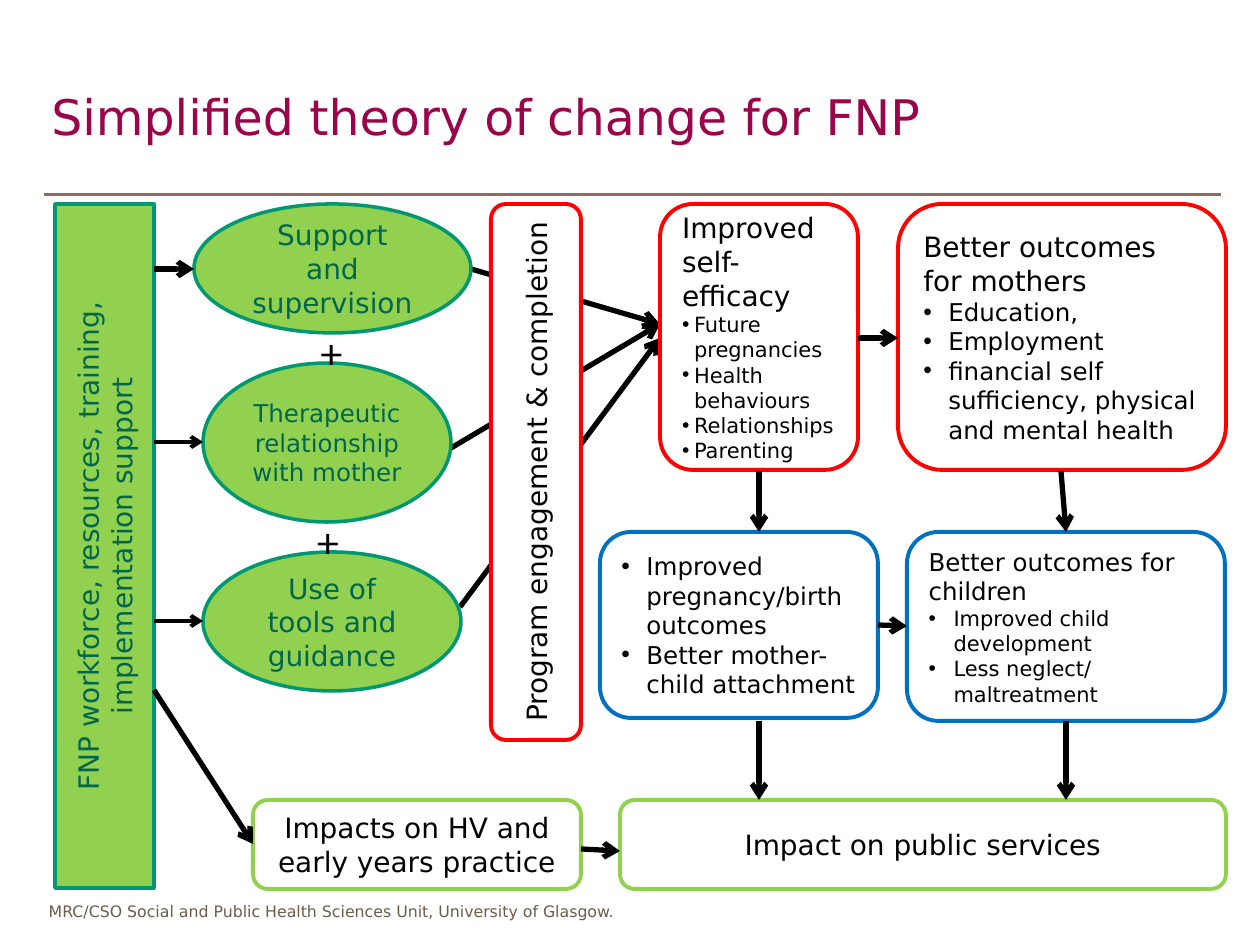
from dataclasses import dataclass

from lxml import etree
from pptx import Presentation
from pptx.dml.color import RGBColor
from pptx.enum.shapes import MSO_CONNECTOR, MSO_SHAPE
from pptx.enum.text import MSO_ANCHOR, PP_ALIGN
from pptx.oxml.ns import qn
from pptx.util import Emu, Pt

RECT, ROUND, OVAL = MSO_SHAPE.RECTANGLE, MSO_SHAPE.ROUNDED_RECTANGLE, MSO_SHAPE.OVAL
STRAIGHT = MSO_CONNECTOR.STRAIGHT
LEFT, CENTER = PP_ALIGN.LEFT, PP_ALIGN.CENTER
TOP, MIDDLE = MSO_ANCHOR.TOP, MSO_ANCHOR.MIDDLE

PX_PER_INCH = 126
PAGE_WIDTH, PAGE_HEIGHT = 1260, 945


@dataclass(frozen=True)
class Theme:
    font: str = "DejaVu Sans"
    plus_font: str = "Cambria"
    title: str = "9A044B"
    rule: str = "91695F"
    footer: str = "6C5C4C"
    ink: str = "000000"
    paper: str = "FFFFFF"
    green: str = "92D050"
    teal: str = "009771"
    dark_teal: str = "00664D"
    red: str = "FF0000"
    blue: str = "0070C0"
    title_size: int = 28
    large: int = 16
    medium: int = 14
    small: int = 12
    footer_size: int = 9
    input_line: float = 2
    box_line: float = 2.25
    arrow_line: float = 3
    thin_arrow: float = 2.25
    rule_line: float = 1.75


THEME = Theme()


def px(length):
    return Emu(round(length * 914400 / PX_PER_INCH))


def rgb(value):
    return RGBColor.from_string(value)


def add_para(frame, text, size, color, align=LEFT, font=THEME.font, indent=0):
    """Fill the first paragraph if it is still empty, otherwise append one."""
    first = frame.paragraphs[0]
    para = frame.add_paragraph() if first.runs else first
    para.alignment = align
    if indent:
        props = para._p.get_or_add_pPr()
        props.set("marL", str(px(indent)))
        props.set("indent", str(-px(indent)))
        etree.SubElement(props, qn("a:buFont")).set("typeface", "Arial")
        etree.SubElement(props, qn("a:buChar")).set("char", "•")
    span = para.add_run()
    span.text = text
    span.font.name = font
    span.font.size = Pt(size)
    span.font.color.rgb = rgb(color)


def add_label(page, bounds, text, size, color, align=CENTER, anchor=TOP,
              font=THEME.font, wrap=True):
    box = page.shapes.add_textbox(*map(px, bounds))
    frame = box.text_frame
    frame.word_wrap = wrap
    frame.vertical_anchor = anchor
    add_para(frame, text, size, color, align, font)


def add_panel(page, kind, bounds, fill, line, width, vertical=False):
    """Add a plain shape and return its text frame."""
    box = page.shapes.add_shape(kind, *map(px, bounds))
    box.shadow.inherit = False
    box.fill.solid()
    box.fill.fore_color.rgb = rgb(fill)
    box.line.color.rgb = rgb(line)
    box.line.width = Pt(width)
    frame = box.text_frame
    frame.word_wrap = True
    frame.vertical_anchor = MIDDLE
    if vertical:
        frame._txBody.bodyPr.set("vert", "vert270")
    return frame


def add_input(page, kind, bounds, text, size=THEME.large, vertical=False):
    frame = add_panel(page, kind, bounds, THEME.green, THEME.teal,
                      THEME.input_line, vertical)
    add_para(frame, text, size, THEME.dark_teal, CENTER)


def add_step(page, bounds, line, text, vertical=False):
    frame = add_panel(page, ROUND, bounds, THEME.paper, line, THEME.box_line, vertical)
    add_para(frame, text, THEME.large, THEME.ink, CENTER)


def add_outcome(page, bounds, line, heading, heading_size, items, item_size, indent):
    frame = add_panel(page, ROUND, bounds, THEME.paper, line, THEME.box_line)
    if heading:
        add_para(frame, heading, heading_size, THEME.ink)
    for item in items:
        add_para(frame, item, item_size, THEME.ink, indent=indent)


def add_line(page, points, color=THEME.ink, width=THEME.arrow_line, arrow=True):
    line = page.shapes.add_connector(STRAIGHT, *map(px, points))
    line.line.color.rgb = rgb(color)
    line.line.width = Pt(width)
    if arrow:
        etree.SubElement(line.line._get_or_add_ln(), qn("a:tailEnd")).set("type", "arrow")
    etree.SubElement(line._element.spPr, qn("a:effectLst"))


def add_frame(page):
    add_label(page, (32, 896, 598, 32),
              "MRC/CSO Social and Public Health Sciences Unit, University of Glasgow.",
              THEME.footer_size, THEME.footer, wrap=False)
    add_line(page, (44, 195, 1221, 195), THEME.rule, THEME.rule_line, arrow=False)
    add_label(page, (39, 76, 1221, 79), "Simplified theory of change for FNP",
              THEME.title_size, THEME.title, LEFT, MIDDLE)


def add_inputs(page):
    add_input(page, RECT, (55, 204, 99, 684),
              "FNP workforce, resources, training, implementation support", vertical=True)
    add_input(page, OVAL, (203, 363, 248, 159),
              "Therapeutic relationship with mother", THEME.medium)
    add_input(page, OVAL, (203, 552, 258, 139), "Use of tools and guidance")
    add_input(page, OVAL, (194, 204, 277, 129), "Support and supervision")
    for bounds in ((302, 314, 59, 72), (302, 503, 44, 72)):
        add_label(page, bounds, "+", THEME.title_size, THEME.ink, font=THEME.plus_font)


def add_outcomes(page):
    add_outcome(page, (660, 204, 198, 266), THEME.red,
                "Improved self-efficacy", THEME.large,
                ("Future pregnancies", "Health behaviours", "Relationships", "Parenting"),
                THEME.small, 12)
    add_outcome(page, (898, 204, 328, 266), THEME.red,
                "Better outcomes for mothers", THEME.large,
                ("Education,", "Employment",
                 "financial self sufficiency, physical and mental health"),
                THEME.medium, 25)
    add_outcome(page, (600, 532, 278, 186), THEME.blue, None, None,
                ("Improved pregnancy/birth outcomes", "Better mother-child attachment"),
                THEME.medium, 25)
    add_outcome(page, (907, 532, 318, 189), THEME.blue,
                "Better outcomes for children", THEME.medium,
                ("Improved child development", "Less neglect/ maltreatment"),
                THEME.small, 25)


def main():
    deck = Presentation()
    deck.slide_width, deck.slide_height = px(PAGE_WIDTH), px(PAGE_HEIGHT)
    page = deck.slides.add_slide(deck.slide_layouts[6])
    add_frame(page)

    # Arrows that pass behind the engagement bar
    for points in ((471, 269, 660, 324), (451, 448, 660, 324), (460, 607, 660, 338)):
        add_line(page, points)

    # Inputs, engagement bar, outcomes and impacts
    add_inputs(page)
    add_step(page, (491, 204, 90, 536), THEME.red,
             "Program engagement & completion", vertical=True)
    add_outcomes(page)
    add_step(page, (253, 800, 328, 89), THEME.green,
             "Impacts on HV and early years practice")
    add_step(page, (620, 800, 606, 89), THEME.green, "Impact on public services")

    # Arrows from the workforce bar
    add_line(page, (154, 269, 194, 269))
    for y in (442, 621):
        add_line(page, (154, y, 203, y), width=THEME.thin_arrow)
    add_line(page, (154, 690, 253, 844))

    # Arrows between outcomes and impacts
    for points in ((858, 338, 898, 338), (878, 625, 907, 626), (581, 849, 620, 851),
                   (759, 471, 759, 532), (1061, 471, 1066, 532),
                   (759, 721, 759, 800), (1066, 721, 1066, 800)):
        add_line(page, points)

    deck.save("out.pptx")


if __name__ == "__main__":
    main()
